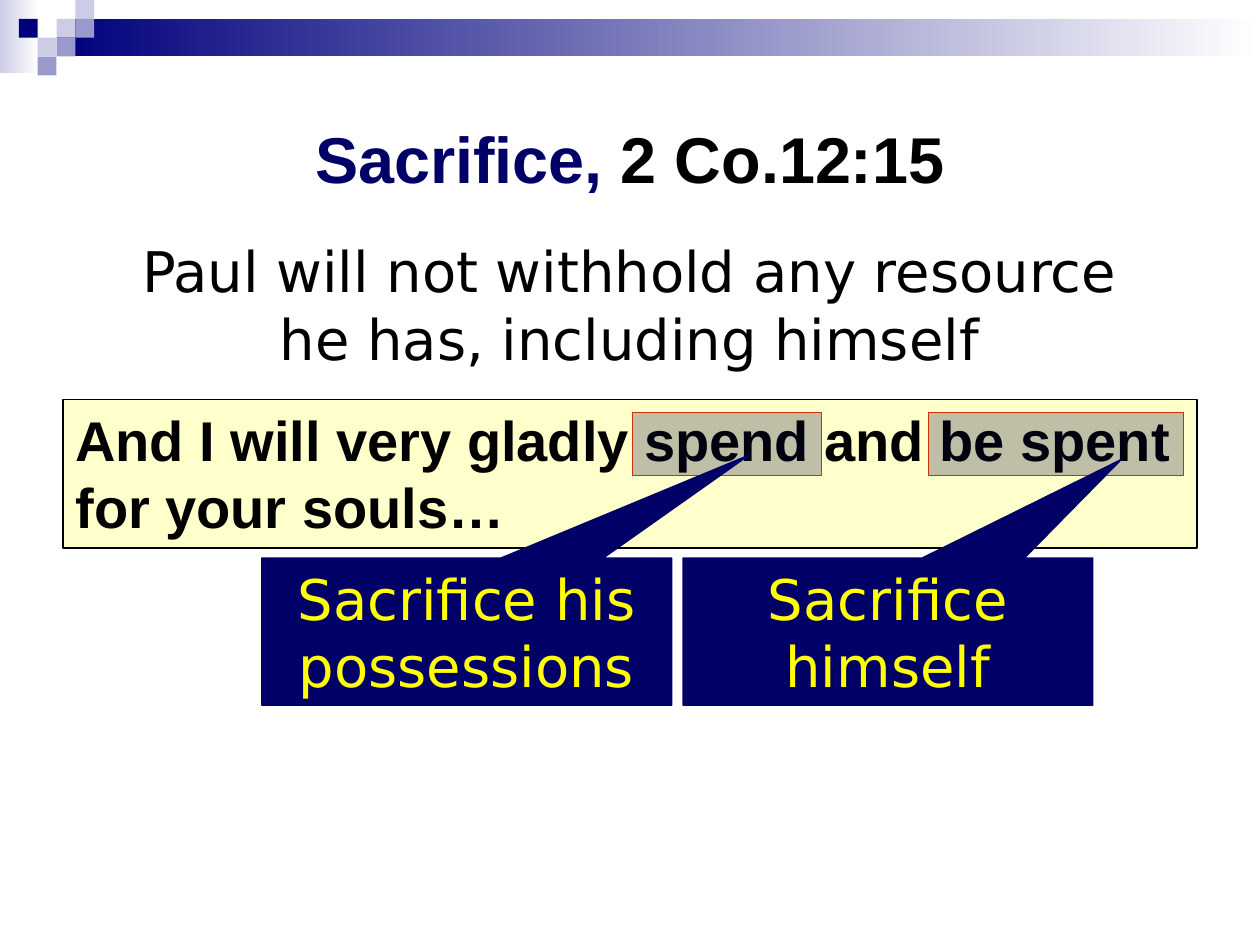
from lxml.etree import SubElement
from pptx import Presentation
from pptx.dml.color import RGBColor
from pptx.enum.shapes import MSO_SHAPE
from pptx.enum.text import MSO_ANCHOR, MSO_AUTO_SIZE, PP_ALIGN
from pptx.oxml.ns import qn
from pptx.util import Cm, Pt

NAVY, DEEP, PALE, MID = "000066", "00007D", "CCCCE6", "9999CC"
BLACK, WHITE, YELLOW = "000000", "FFFFFF", "FFFF00"
HEAD = {"name": "Arial", "bold": True}
PLAIN = {"name": "DejaVu Sans", "bold": False}


def color(text):
    return RGBColor.from_string(text)


class Deck:
    def __init__(self):
        self.prs = Presentation()
        self.prs.slide_width, self.prs.slide_height = Cm(25.4), Cm(19.05)
        self.slide = self.prs.slides.add_slide(self.prs.slide_layouts[1])

    def label(self, frame, runs, style, size=32, align=PP_ALIGN.CENTER, anchor=MSO_ANCHOR.TOP):
        """Fill a frame with one paragraph; runs are (text, hex) pairs."""
        form = {"word_wrap": True, "auto_size": MSO_AUTO_SIZE.NONE, "vertical_anchor": anchor}
        for key, val in form.items():
            setattr(frame, key, val)
        para = frame.paragraphs[0]
        para.alignment = align
        for text, tint in runs:
            for i, line in enumerate(text.split("\n")):
                if i:
                    para.add_line_break()
                run = para.add_run()
                run.text = line
                for key, val in {**style, "size": Pt(size)}.items():
                    setattr(run.font, key, val)
                run.font.color.rgb = color(tint)
        return para

    def holder(self, item, box, runs, style, **form):
        """Move a template placeholder and fill it without a bullet."""
        item.left, item.top, item.width, item.height = map(Cm, box)
        props = self.label(item.text_frame, runs, style, **form)._p.get_or_add_pPr()
        props.set("marL", "0")
        props.set("indent", "0")
        SubElement(props, qn("a:buNone"))

    def shape(self, box, fill, line=None, width=0.75, kind=MSO_SHAPE.RECTANGLE):
        item = self.slide.shapes.add_shape(kind, *map(Cm, box))
        item.shadow.inherit = False
        item.fill.solid()
        item.fill.fore_color.rgb = color(fill)
        if line:
            item.line.color.rgb = color(line)
            item.line.width = Pt(width)
        else:
            item.line.fill.background()
        return item

    def fade(self, box, start):
        """Rectangle that fades to white from left to right."""
        fill = self.shape(box, start).fill
        fill.gradient()
        fill.gradient_angle = 0
        for stop, tint in zip(fill.gradient_stops, (start, WHITE)):
            stop.color.rgb = color(tint)

    def mark(self, left, width):
        """See-through marker over a word of the verse."""
        item = self.shape((left, 8.31, width, 1.27), "00003E", "CC3300", 0.25)
        tint = item.fill._xPr.find(qn("a:solidFill"))[0]
        SubElement(tint, qn("a:alpha")).set("val", "25000")

    def callout(self, left, text, tip):
        item = self.shape((left, 11.25, 8.26, 2.97), NAVY, NAVY,
                          kind=MSO_SHAPE.RECTANGULAR_CALLOUT)
        for i, val in enumerate(tip):
            item.adjustments[i] = val
        self.label(item.text_frame, [(text, YELLOW)], PLAIN)


def main():
    deck = Deck()

    # Corner mosaic and top band, on a grid of small squares
    unit = 0.38
    deck.fade((0, 0, 0.79, 1.47), PALE)
    deck.fade((3 * unit, unit, 25.4 - 3 * unit, 2 * unit), DEEP)
    tiles = [(3, 1, PALE), (4, 0, PALE), (4, 1, MID), (2, 2, PALE),
             (1, 1, DEEP), (3, 2, MID), (2, 3, MID)]
    for col, row, tint in tiles:
        deck.shape((col * unit, row * unit, unit, unit), tint)

    # Title and main point
    title, body = deck.slide.placeholders
    deck.holder(title, (1.27, 1.27, 22.86, 3.81),
                [("Sacrifice,", NAVY), (" 2 Co.12:15", BLACK)],
                HEAD, size=37, anchor=MSO_ANCHOR.MIDDLE)
    deck.holder(body, (1.27, 4.65, 22.86, 10.8),
                [("Paul will not withhold any resource\nhe has, including himself", BLACK)], PLAIN)

    # Verse with two marked words
    verse = deck.shape((1.27, 8.05, 22.86, 3), "FFFFCC", BLACK)
    deck.label(verse.text_frame,
               [("And I will very gladly spend and be spent for your souls…", BLACK)],
               HEAD, align=PP_ALIGN.LEFT)
    deck.mark(12.75, 3.81)
    deck.mark(18.72, 5.13)

    # Callouts that explain the marked words
    deck.callout(5.28, "Sacrifice his\npossessions", (0.69, -1.2))
    deck.callout(13.77, "Sacrifice\nhimself", (0.57, -1.17))

    deck.prs.save("out.pptx")


if __name__ == "__main__":
    main()
